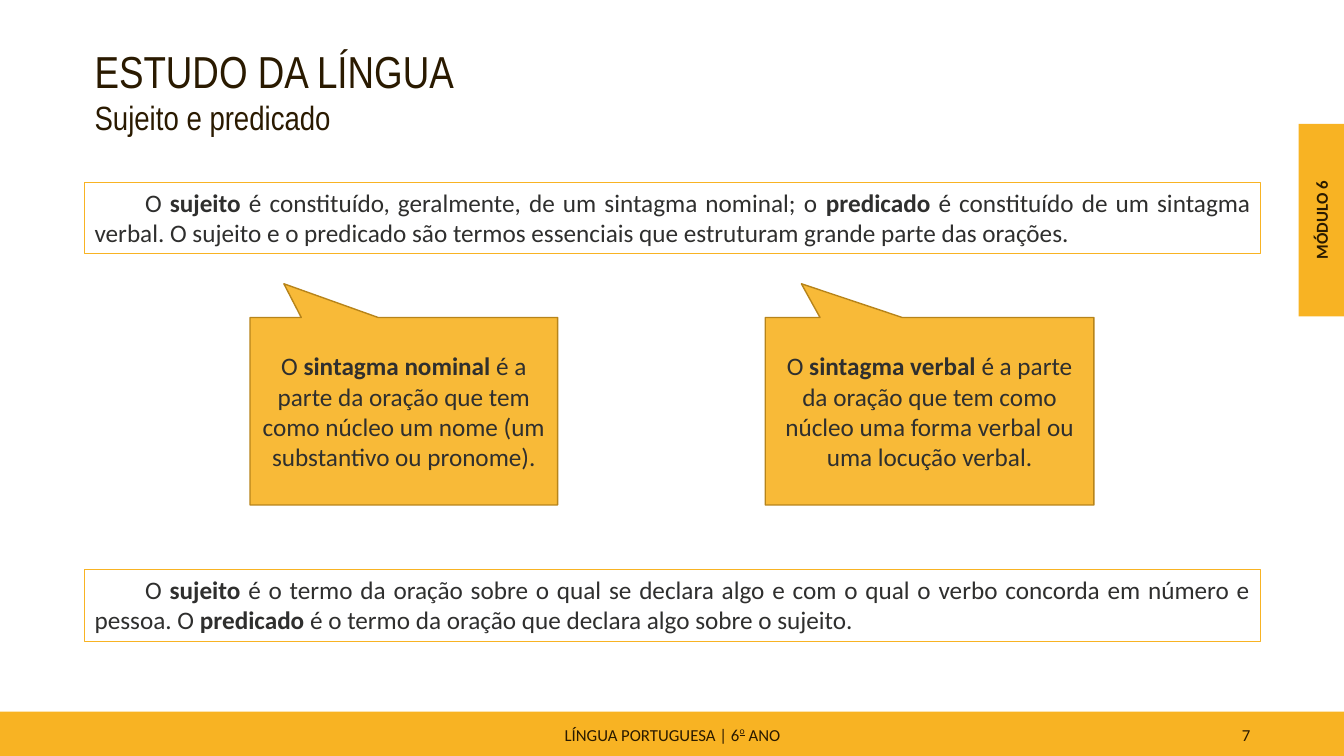
from lxml.etree import SubElement
from pptx import Presentation
from pptx.dml.color import RGBColor
from pptx.enum.shapes import MSO_SHAPE as SHAPE
from pptx.enum.text import MSO_ANCHOR as ANCHOR, PP_ALIGN as ALIGN
from pptx.oxml.ns import qn
from pptx.util import Inches, Pt

AMBER = RGBColor(0xF8, 0xB3, 0x23)
OCHRE = RGBColor(0xB7, 0x84, 0x1A)
BROWN = RGBColor(0x2A, 0x1A, 0x00)
GREY = RGBColor(0x2F, 0x2F, 0x2E)

SUBJECT = ("O **sujeito** é constituído, geralmente, de um sintagma nominal; o **predicado** "
           "é constituído de um sintagma verbal. O sujeito e o predicado são termos essenciais "
           "que estruturam grande parte das orações.")
SUMMARY = ("O **sujeito** é o termo da oração sobre o qual se declara algo e com o qual o verbo "
           "concorda em número e pessoa. O **predicado** é o termo da oração que declara algo "
           "sobre o sujeito.")
NOMINAL = ["O **sintagma nominal **é a parte da oração que tem como núcleo um nome (um",
           "substantivo ou pronome)."]
VERBAL = ["O **sintagma verbal **é a parte da oração que tem como núcleo uma forma verbal "
          "ou uma locução verbal."]


def add_runs(p, text, size, color, font="Calibri", align=ALIGN.LEFT):
    """Fill a paragraph with runs, bold between double asterisks."""
    p.alignment = align
    for i, part in enumerate(text.split("**")):
        if part:
            r = p.add_run()
            r.text = part
            r.font.name, r.font.size, r.font.bold = font, Pt(size), i % 2 == 1
            r.font.color.rgb = color


def add_box(s, shape, x, y, w, h, fill=None, line=None, weight=0.75):
    """Add a shape with plain fill and outline and no shadow."""
    sp = s.shapes.add_shape(shape, Inches(x), Inches(y), Inches(w), Inches(h))
    sp.shadow.inherit = False
    if fill is None:
        sp.fill.background()
    else:
        sp.fill.solid()
        sp.fill.fore_color.rgb = fill
    if line is None:
        sp.line.fill.background()
    else:
        sp.line.color.rgb = line
        sp.line.width = Pt(weight)
    return sp


def add_label(s, x, y, w, h, anchor=ANCHOR.TOP):
    """Add a wrapping text box."""
    tb = s.shapes.add_textbox(Inches(x), Inches(y), Inches(w), Inches(h))
    tb.text_frame.word_wrap = True
    tb.text_frame.vertical_anchor = anchor
    return tb


def add_footer(s, x, y, w, h):
    """Draw the footer bar with its subject and page number."""
    add_box(s, SHAPE.RECTANGLE, x, y, w, h, AMBER)
    subject = add_label(s, x + 4.42, y + 0.04, 4.5, 0.38, ANCHOR.MIDDLE)
    page = add_label(s, x + 9.42, y + 0.04, 3.08, 0.38, ANCHOR.MIDDLE)
    p = subject.text_frame.paragraphs[0]
    for part in ("LÍNGUA PORTUGUESA | 6", "o", " ANO"):
        add_runs(p, part, 12, BROWN, align=ALIGN.CENTER)
    ordinal = p.runs[1]
    ordinal.font.underline = True
    ordinal.font._element.set("baseline", "45000")
    add_runs(page.text_frame.paragraphs[0], "7", 12, BROWN, align=ALIGN.RIGHT)
    for tb in (subject, page):
        tb.text_frame.paragraphs[0].space_after = Pt(6)


def add_module_tab(s, x, y, w, h):
    """Draw the side tab with its vertical label."""
    add_box(s, SHAPE.RECTANGLE, x, y, w, h, AMBER)
    thick = 0.3
    tb = add_label(s, x + (w - h) / 2, y + (h - thick) / 2, h, thick)
    tb.rotation = 270
    add_runs(tb.text_frame.paragraphs[0], "**MÓDULO 6**", 12, BROWN, align=ALIGN.CENTER)


def add_heading(s, x, y, w, h):
    """Write the title and the subtitle."""
    tf = add_label(s, x, y, w, h).text_frame
    add_runs(tf.paragraphs[0], "ESTUDO DA LÍNGUA", 32, BROWN, "Arial Narrow")
    add_runs(tf.add_paragraph(), "Sujeito e predicado", 24, BROWN, "Arial Narrow")


def add_definition(s, x, y, w, h, text):
    """Draw an outlined box with one justified, indented paragraph."""
    tf = add_box(s, SHAPE.RECTANGLE, x, y, w, h, line=AMBER).text_frame
    tf.word_wrap = True
    tf.vertical_anchor = ANCHOR.TOP
    p = tf.paragraphs[0]
    add_runs(p, text, 18, GREY, align=ALIGN.JUSTIFY)
    p._p.get_or_add_pPr().set("indent", str(Inches(0.5)))


def add_callout(s, x, y, w, h, lines):
    """Draw a translucent callout that points up to the definition."""
    sp = add_box(s, SHAPE.RECTANGULAR_CALLOUT, x, y, w, h, AMBER, OCHRE, 1)
    sp.adjustments[0], sp.adjustments[1] = -0.39, -0.68
    color = sp._element.spPr.find(qn("a:solidFill")).find(qn("a:srgbClr"))
    SubElement(color, qn("a:alpha")).set("val", "90000")
    tf = sp.text_frame
    tf.word_wrap = True
    tf.vertical_anchor = ANCHOR.MIDDLE
    for i, text in enumerate(lines):
        p = tf.add_paragraph() if i else tf.paragraphs[0]
        add_runs(p, text, 18, GREY, align=ALIGN.CENTER)


def main():
    """Build the slide and save it."""
    prs = Presentation()
    prs.slide_width, prs.slide_height = Inches(13.33), Inches(7.5)
    s = prs.slides.add_slide(prs.slide_layouts[6])
    add_footer(s, 0, 7.06, 13.33, 0.45)
    add_module_tab(s, 12.88, 1.23, 0.45, 1.91)
    add_heading(s, 0.84, 0.38, 4.8, 1.04)
    for y, text in ((1.81, SUBJECT), (5.65, SUMMARY)):
        add_definition(s, 0.84, y, 11.66, 0.71, text)
    for x, w, lines in ((2.48, 3.05, NOMINAL), (7.59, 3.26, VERBAL)):
        add_callout(s, x, 3.15, w, 1.86, lines)
    prs.save("out.pptx")


if __name__ == "__main__":
    main()
